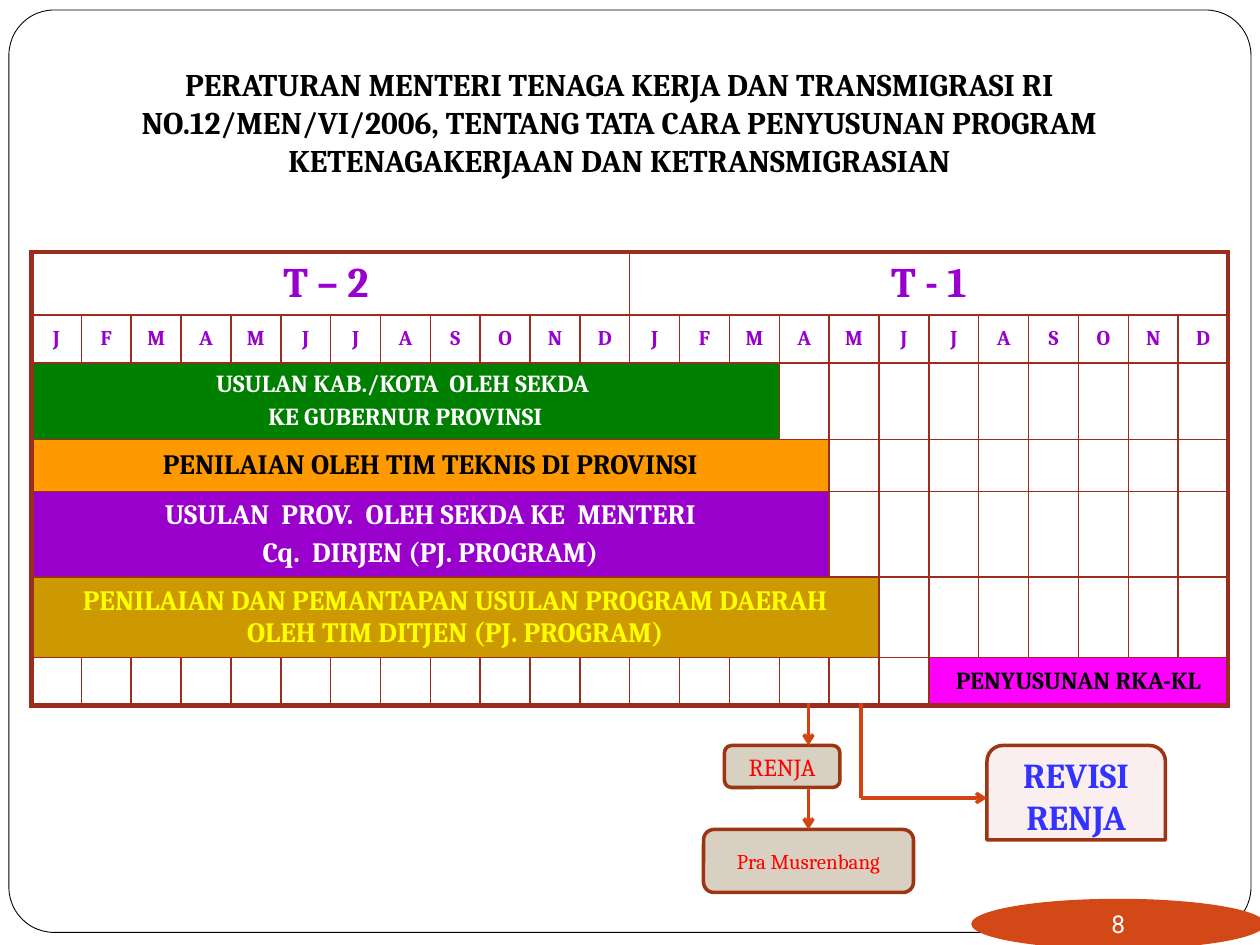
from lxml import etree
from pptx import Presentation
from pptx.dml.color import RGBColor
from pptx.enum.shapes import MSO_CONNECTOR, MSO_SHAPE
from pptx.enum.text import MSO_ANCHOR, PP_ALIGN
from pptx.oxml.ns import qn
from pptx.util import Inches, Pt

CENTER, MIDDLE, TOP = PP_ALIGN.CENTER, MSO_ANCHOR.MIDDLE, MSO_ANCHOR.TOP
ROUND, TAB, OVAL = (MSO_SHAPE.ROUNDED_RECTANGLE,
                    MSO_SHAPE.ROUND_2_SAME_RECTANGLE, MSO_SHAPE.OVAL)
STRAIGHT = MSO_CONNECTOR.STRAIGHT
HEX = {"black": "000000", "white": "FFFFFF", "purple": "9900CC", "green": "008000",
       "orange": "FF9900", "gold": "CC9900", "yellow": "FFFF00", "pink": "FF00FF",
       "rule": "9B2D1F", "edge": "9C3511", "arrow": "D34412", "badge": "D34817",
       "sand": "D8D0C0", "rose": "FAEFEE", "red": "FF0000", "blue": "3333FF"}
COLS = 24


def grid(*marks):
    """Turn twelfths of an inch into lengths."""
    return [Inches(m / 12) for m in marks]


def write(frame, text, size, color, bold=True, face="Cambria", gap=0):
    """Fill a text frame with centred lines; gap is a share of the size."""
    frame.text = text
    for para in frame.paragraphs:
        para.alignment = CENTER
        para.space_before = Pt(gap * size)
        for run in para.runs:
            style = {"size": Pt(size), "bold": bold, "name": face}
            for key, value in style.items():
                setattr(run.font, key, value)
            run.font.color.rgb = RGBColor.from_string(HEX[color])


deck = Presentation()
deck.slide_width, deck.slide_height = Inches(10), Inches(7.5)
slide = deck.slides.add_slide(deck.slide_layouts[5])
shapes = slide.shapes

# Frame, page badge and plan boxes: kind, place, fill, line, width, text
boxes = [
    (ROUND, (0.85, 0.95, 118.3, 87.85), "white", "black", 0.5, None),
    (OVAL, (92.5, 85.6, 28, 4.8), "badge", None, 0, ("8", 14, "white", False, "Roboto")),
    (ROUND, (69, 71, 11, 4), "sand", "edge", 2, ("RENJA", 14, "red", False)),
    (ROUND, (67, 79, 20, 6), "sand", "edge", 2, ("Pra Musrenbang", 12, "red", False)),
    (TAB, (94, 71, 17, 9), "rose", "edge", 2, ("REVISI RENJA", 20, "blue")),
]
for kind, place, fill, line, width, words in boxes:
    box = shapes.add_shape(kind, *grid(*place))
    box.shadow.inherit = False
    box.fill.solid()
    box.fill.fore_color.rgb = RGBColor.from_string(HEX[fill])
    if line:
        box.line.color.rgb = RGBColor.from_string(HEX[line])
        box.line.width = Pt(width)
    else:
        box.line.fill.background()
    if words:
        box.text_frame.vertical_anchor = MIDDLE
        write(box.text_frame, *words)
    else:
        box.adjustments[0] = 0.049
        shapes._spTree.insert(2, box._element)

title = shapes.title
title.left, title.top, title.width, title.height = grid(2, 5.6, 114, 12)
title.text_frame.vertical_anchor = TOP
write(title.text_frame,
      "PERATURAN MENTERI TENAGA KERJA DAN TRANSMIGRASI RI\v"
      "NO.12/MEN/VI/2006, TENTANG TATA CARA PENYUSUNAN PROGRAM\v"
      "KETENAGAKERJAAN DAN KETRANSMIGRASIAN", 18, "black")

# Schedule: row, first column, columns spanned, fill, text, size, colour
bars = [
    (0, 0, 12, None, "T – 2 ", 24, "purple"),
    (0, 12, 12, None, "T - 1", 24, "purple"),
    (2, 0, 15, "green", "USULAN KAB./KOTA  OLEH SEKDA \nKE GUBERNUR PROVINSI", 14, "white"),
    (3, 0, 16, "orange", "PENILAIAN OLEH TIM TEKNIS DI PROVINSI", 16, "black"),
    (4, 0, 16, "purple",
     "USULAN  PROV.  OLEH SEKDA KE  MENTERI\nCq.  DIRJEN (PJ. PROGRAM)", 16, "white"),
    (5, 0, 17, "gold",
     "PENILAIAN DAN PEMANTAPAN USULAN PROGRAM DAERAH\vOLEH TIM DITJEN (PJ. PROGRAM)",
     16, "yellow"),
    (6, 18, 6, "pink", "PENYUSUNAN RKA-KL", 14, "black"),
]
bars += [(1, col, 1, None, month, 12, "purple")
         for col, month in enumerate("JFMAMJJASOND" * 2)]
highs = [0.5, 0.38, 0.61, 0.41, 0.68, 0.64, 0.38]
rows = len(highs)
table = shapes.add_table(rows, COLS, *grid(3, 24, 114, 43.2)).table
table.first_row = table.horz_banding = False
for col in table.columns:
    col.width = Inches(9.5 / COLS)
for row, high in zip(table.rows, highs):
    row.height = Inches(high)

fills = {}
for row, col, span, fill, text, size, color in bars:
    cell = table.cell(row, col)
    if span > 1:
        cell.merge(table.cell(row, col + span - 1))
    fills[row, col] = fill
    write(cell.text_frame, text, size, color, gap=0.2)

for row in range(rows):
    for col in range(COLS):
        cell = table.cell(row, col)
        end = col + (cell.span_width if cell.is_merge_origin else 1)
        style = {"vertical_anchor": MIDDLE, "margin_top": 0, "margin_bottom": 0,
                 "margin_left": Inches(0.05), "margin_right": Inches(0.05)}
        for key, value in style.items():
            setattr(cell, key, value)
        outer = {"lnL": col == 0, "lnR": end == COLS, "lnT": row == 0, "lnB": row == rows - 1}
        props = cell._tc.get_or_add_tcPr()
        for side, thick in outer.items():
            line = etree.SubElement(props, qn("a:" + side), w=str(Pt(3 if thick else 1)))
            paint = etree.SubElement(line, qn("a:solidFill"))
            etree.SubElement(paint, qn("a:srgbClr"), val=HEX["rule"])
        fill = fills.get((row, col))
        if fill:
            cell.fill.solid()
            cell.fill.fore_color.rgb = RGBColor.from_string(HEX[fill])
        else:
            cell.fill.background()

# Links from the schedule to the plan boxes: start, end, arrowhead
links = [((77, 67), (77, 71), True), ((77, 75), (77, 79), True),
         ((82, 67), (82, 76), False), ((82, 76), (94, 76), True)]
for start, end, head in links:
    link = shapes.add_connector(STRAIGHT, *grid(*start, *end))
    link.line.color.rgb = RGBColor.from_string(HEX["arrow"])
    link.line.width = Pt(2)
    if head:
        etree.SubElement(link.line._get_or_add_ln(), qn("a:tailEnd"), type="arrow")
    etree.SubElement(link._element.spPr, qn("a:effectLst"))

deck.save("out.pptx")
